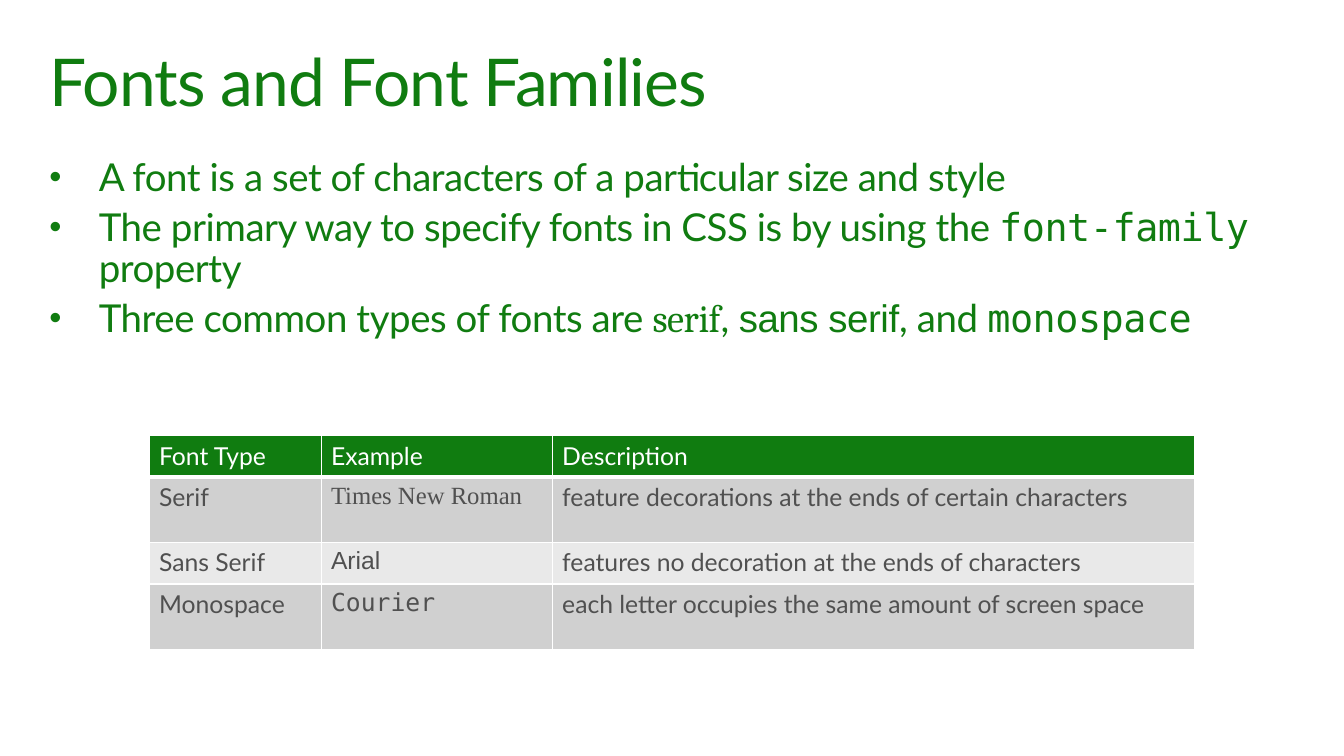
from dataclasses import dataclass

from lxml import etree
from pptx import Presentation
from pptx.dml.color import RGBColor
from pptx.enum.text import MSO_ANCHOR, MSO_AUTO_SIZE, PP_ALIGN
from pptx.oxml.ns import qn
from pptx.util import Pt

PX = 9144
TOP = MSO_ANCHOR.TOP
LEFT = PP_ALIGN.LEFT
NO_FIT, GROW = MSO_AUTO_SIZE.NONE, MSO_AUTO_SIZE.SHAPE_TO_FIT_TEXT


@dataclass(frozen=True)
class Theme:
    green: str = "107C10"
    white: str = "FFFFFF"
    grey: str = "505050"
    bands: tuple = ("D0D0D0", "E9E9E9")
    title: int = 48
    body: int = 28
    cell: int = 18
    sans: str = "Lato"
    serif: str = "Cambria"
    times: str = "Times New Roman"
    arial: str = "Arial"
    mono: str = "DejaVu Sans Mono"


THEME = Theme()

TITLE = "Fonts and Font Families"
BULLETS = [
    [("A font is a set of characters of a particular size and style", THEME.sans)],
    [("The primary way to specify fonts in CSS is by using the ", THEME.sans),
     ("font-family", THEME.mono), (" property", THEME.sans)],
    [("Three common types of fonts are ", THEME.sans), ("serif", THEME.serif),
     (", ", THEME.sans), ("sans serif", THEME.arial),
     (", and ", THEME.sans), ("monospace", THEME.mono)],
]
FONT_TYPES = [
    ("Font Type", "Example", "Description"),
    ("Serif", "Times New Roman", "feature decorations at the ends of certain characters"),
    ("Sans Serif", "Arial", "features no decoration at the ends of characters"),
    ("Monospace", "Courier", "each letter occupies the same amount of screen space"),
]
EXAMPLE_FONTS = [THEME.sans, THEME.times, THEME.arial, THEME.mono]

SLIDE = (1360, 765)
TITLE_BOX = (40, 40, 1280, 100)
BODY_BOX = (40, 150, 1280, 207)
TABLE_AT = (151, 441)
COLUMNS = (174, 234, 650)
ROWS = (42, 66, 42, 66)
INSET = 10
INDENT = 50


def apply(target, values):
    for name, value in values.items():
        setattr(target, name, value)


def place(shape, box, fit):
    apply(shape, dict(zip(("left", "top", "width", "height"), (n * PX for n in box))))
    margins = {f"margin_{side}": INSET * PX for side in ("left", "top", "right", "bottom")}
    apply(shape.text_frame, {**margins, "word_wrap": True, "auto_size": fit,
                             "vertical_anchor": TOP})


def add_span(para, text, font, size, color, spacing=0):
    span = para.add_run()
    span.text = text
    apply(span.font, {"name": font, "size": Pt(size), "bold": False})
    span.font.color.rgb = RGBColor.from_string(color)
    if spacing:
        span._r.get_or_add_rPr().set("spc", str(spacing))


def add_bullet(para):
    props = para._p.get_or_add_pPr()
    props.set("marL", str(INDENT * PX))
    props.set("indent", str(-INDENT * PX))
    for tag, name, value in (("a:buSzPct", "val", "90000"),
                             ("a:buFont", "typeface", THEME.arial),
                             ("a:buChar", "char", "•")):
        etree.SubElement(props, qn(tag)).set(name, value)


def add_borders(cell):
    props = cell._tc.get_or_add_tcPr()
    for side, points in (("L", 1), ("R", 1), ("T", 1), ("B", 3)):
        line = etree.SubElement(props, qn(f"a:ln{side}"), w=str(Pt(points)))
        fill = etree.SubElement(line, qn("a:solidFill"))
        etree.SubElement(fill, qn("a:srgbClr"), val=THEME.white)


def fill_title(shape):
    place(shape, TITLE_BOX, NO_FIT)
    para = shape.text_frame.paragraphs[0]
    apply(para, {"alignment": LEFT, "line_spacing": 0.9})
    add_span(para, TITLE, THEME.sans, THEME.title, THEME.green, -70)


def fill_body(shape):
    place(shape, BODY_BOX, GROW)
    frame = shape.text_frame
    for index, spans in enumerate(BULLETS):
        para = frame.add_paragraph() if index else frame.paragraphs[0]
        add_bullet(para)
        apply(para, {"alignment": LEFT, "line_spacing": 0.9,
                     "space_before": Pt(6 if index else 0)})
        for text, font in spans:
            add_span(para, text, font, THEME.body, THEME.green, -30)


def add_font_table(page):
    box = (*TABLE_AT, sum(COLUMNS), sum(ROWS))
    table = page.shapes.add_table(len(ROWS), len(COLUMNS), *(n * PX for n in box)).table
    for column, width in zip(table.columns, COLUMNS):
        column.width = width * PX
    for r, (texts, height) in enumerate(zip(FONT_TYPES, ROWS)):
        table.rows[r].height = height * PX
        for c, text in enumerate(texts):
            cell = table.cell(r, c)
            if r == 0:
                add_borders(cell)
            cell.fill.solid()
            shade = THEME.bands[(r - 1) % 2] if r else THEME.green
            cell.fill.fore_color.rgb = RGBColor.from_string(shade)
            font = EXAMPLE_FONTS[r] if c == 1 else THEME.sans
            color = THEME.grey if r else THEME.white
            add_span(cell.text_frame.paragraphs[0], text, font, THEME.cell, color)


def main():
    deck = Presentation()
    deck.slide_width, deck.slide_height = (n * PX for n in SLIDE)
    page = deck.slides.add_slide(deck.slide_layouts[1])
    fill_title(page.shapes.title)
    fill_body(page.placeholders[1])
    add_font_table(page)
    deck.save("out.pptx")


if __name__ == "__main__":
    main()
